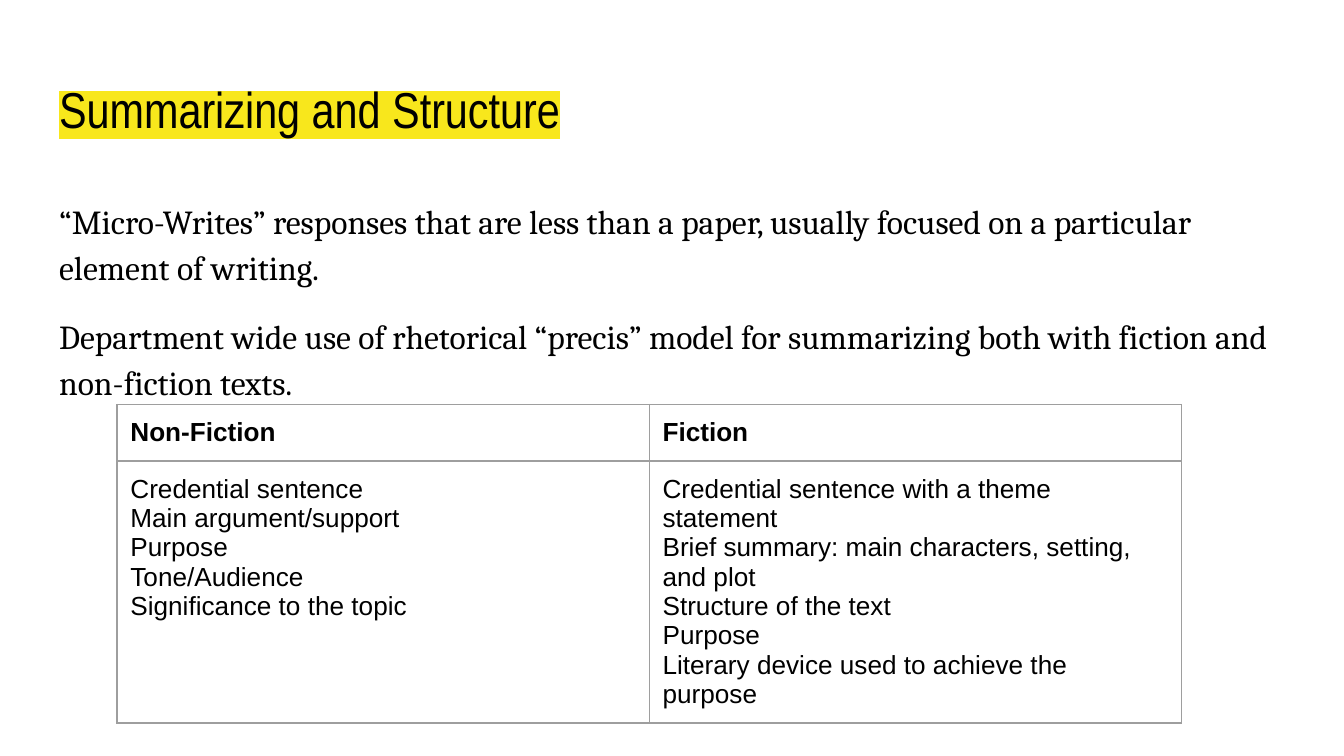
import lxml.etree
import pptx
import pptx.dml.color
import pptx.enum.text
import pptx.oxml.ns
import pptx.util

BLACK = pptx.dml.color.RGBColor(0x00, 0x00, 0x00)
YELLOW = pptx.dml.color.RGBColor(0xF8, 0xE7, 0x1C)
GREY = pptx.dml.color.RGBColor(0x9E, 0x9E, 0x9E)

# A 16:9 page
WIDTH = pptx.util.Inches(10)
HEIGHT = WIDTH * 9 // 16
LEFT, FULL_WIDTH = 0.34, 9.32
INSET = pptx.util.Inches(0.1)
COLUMN_WIDTH, ROW_HEIGHTS = 3.96, (0.42, 1.95)

TITLE = "Summarizing and Structure"
BODY = (
    "“Micro-Writes” responses that are less than a paper, usually focused on "
    "a particular element of writing.",
    "Department wide use of rhetorical “precis” model for summarizing both "
    "with fiction and non-fiction texts.",
)
MODELS = {
    "Non-Fiction": (
        "Credential sentence",
        "Main argument/support",
        "Purpose",
        "Tone/Audience",
        "Significance to the topic",
    ),
    "Fiction": (
        "Credential sentence with a theme statement",
        "Brief summary: main characters, setting, and plot",
        "Structure of the text",
        "Purpose",
        "Literary device used to achieve the purpose",
    ),
}


def add_element(parent, tag, position, **attributes):
    element = lxml.etree.Element(pptx.oxml.ns.qn(tag), attributes)
    parent.insert(position, element)
    return element


def set_insets(holder):
    holder.margin_left = holder.margin_right = INSET
    holder.margin_top = holder.margin_bottom = INSET


def write(frame, lines, font, size, bold=False):
    frame.text = "\n".join(lines)
    for para in frame.paragraphs:
        para.alignment = pptx.enum.text.PP_ALIGN.LEFT
        for span in para.runs:
            span.font.name = font
            span.font.size = pptx.util.Pt(size)
            span.font.bold = bold
            span.font.color.rgb = BLACK


def place(box, top, height, anchor):
    box.left, box.width = pptx.util.Inches(LEFT), pptx.util.Inches(FULL_WIDTH)
    box.top, box.height = pptx.util.Inches(top), pptx.util.Inches(height)
    frame = box.text_frame
    set_insets(frame)
    frame.word_wrap = True
    frame.auto_size = pptx.enum.text.MSO_AUTO_SIZE.NONE
    frame.vertical_anchor = anchor
    return frame


def fill_title(box):
    frame = place(box, 0.5, 0.63, pptx.enum.text.MSO_ANCHOR.BOTTOM)
    write(frame, [TITLE], "Arial Narrow", 27)
    # The highlight belongs right after the text fill
    properties = frame.paragraphs[0].runs[0]._r.get_or_add_rPr()
    highlight = add_element(properties, "a:highlight", 1)
    add_element(highlight, "a:srgbClr", 0, val=str(YELLOW))


def fill_body(box):
    frame = place(box, 1.35, 3.65, pptx.enum.text.MSO_ANCHOR.TOP)
    write(frame, BODY, "Cambria", 18)
    for number, para in enumerate(frame.paragraphs):
        para.line_spacing = 1.15
        para.space_before = pptx.util.Pt(12 * number)
        # Plain paragraphs without bullets
        properties = para._p.get_or_add_pPr()
        properties.set("marL", "0")
        properties.set("indent", "0")
        add_element(properties, "a:buNone", len(properties))


def draw_borders(cell):
    properties = cell._tc.get_or_add_tcPr()
    for position, side in enumerate("LRTB"):
        line = add_element(properties, f"a:ln{side}", position,
                           w=str(pptx.util.Pt(0.75)))
        fill = add_element(line, "a:solidFill", 0)
        add_element(fill, "a:srgbClr", 0, val=str(GREY))


def add_model_table(page):
    table = page.shapes.add_table(
        len(ROW_HEIGHTS), len(MODELS),
        pptx.util.Inches(0.87), pptx.util.Inches(3.01),
        pptx.util.Inches(COLUMN_WIDTH * len(MODELS)),
        pptx.util.Inches(sum(ROW_HEIGHTS))).table
    table.first_row = table.horz_banding = False
    for row, height in zip(table.rows, ROW_HEIGHTS):
        row.height = pptx.util.Inches(height)
    # One column per model: heading above its points
    for column, (heading, points) in enumerate(MODELS.items()):
        for row, lines in enumerate(([heading], points)):
            cell = table.cell(row, column)
            set_insets(cell)
            cell.fill.background()
            draw_borders(cell)
            write(cell.text_frame, lines, "Arial", 14, bold=row == 0)


def main():
    deck = pptx.Presentation()
    deck.slide_width, deck.slide_height = WIDTH, HEIGHT
    page = deck.slides.add_slide(deck.slide_layouts[1])
    fill_title(page.shapes.title)
    fill_body(page.placeholders[1])
    add_model_table(page)
    deck.save("out.pptx")


if __name__ == "__main__":
    main()
